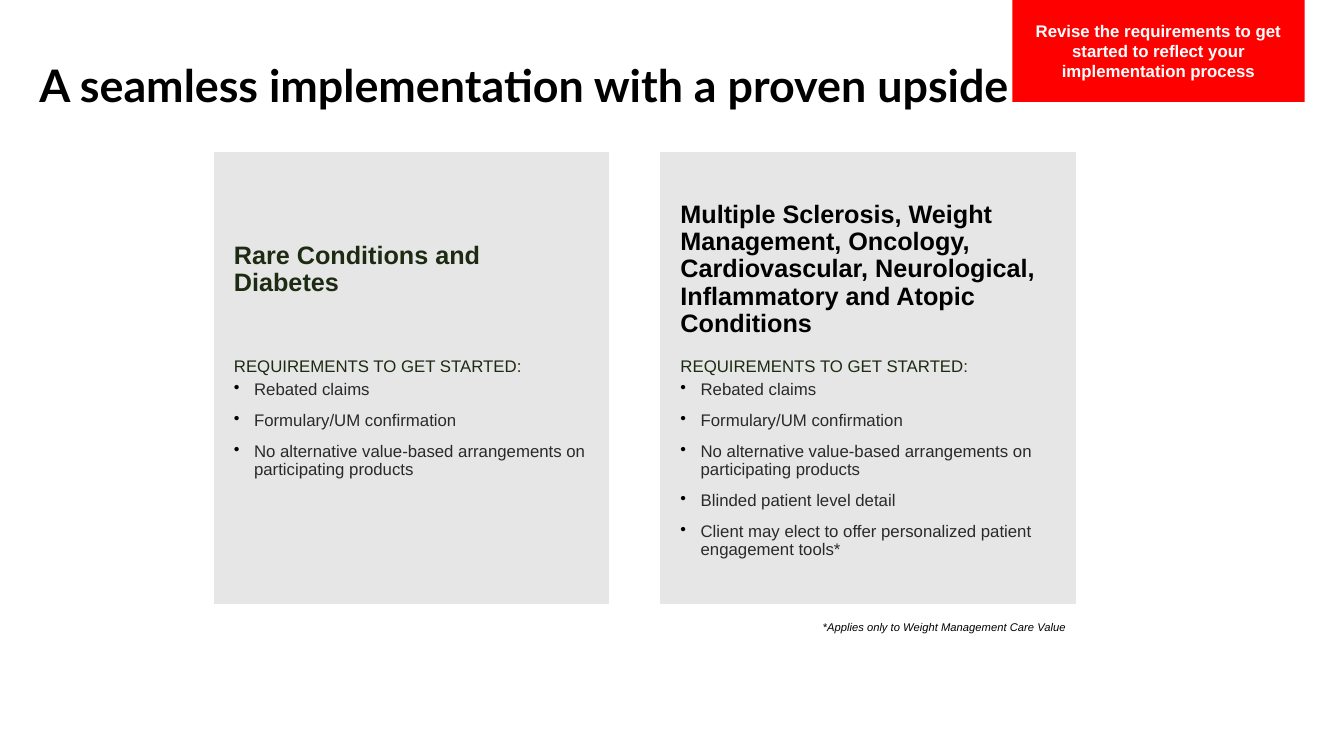
from lxml.etree import SubElement
from pptx import Presentation
from pptx.dml.color import RGBColor
from pptx.enum.shapes import MSO_SHAPE
from pptx.enum.text import MSO_ANCHOR as Anchor, PP_ALIGN as Align
from pptx.oxml.ns import qn
from pptx.util import Pt

PX = 9144  # 100 px to the inch
BLACK = RGBColor(0, 0, 0)
WHITE = RGBColor(255, 255, 255)
RED = RGBColor(255, 0, 0)
GREY = RGBColor(0xE7, 0xE6, 0xE6)
GREEN = RGBColor(0x1C, 0x2B, 0x12)
INK = RGBColor(0x2A, 0x2A, 0x2A)

PLAIN = "{2D5ABB26-0587-4C30-8999-92F81FD0307C}"  # no style, no grid
COLS = [392, 26, 21, 4, 412]
ROWS = [198, 24, 226]
NEEDS = [
    "Rebated claims",
    "Formulary/UM confirmation",
    "No alternative value-based arrangements on participating products",
]
MORE = [
    "Blinded patient level detail",
    "Client may elect to offer personalized patient engagement tools*",
]


def px(*nums):
    return [n * PX for n in nums]


def inset(box, left=0, top=0, right=0, bottom=0):
    """Set the inner margins of a text frame or a table cell."""
    (box.margin_left, box.margin_top,
     box.margin_right, box.margin_bottom) = px(left, top, right, bottom)


def bullet(para):
    props = para._p.get_or_add_pPr()
    props.set("marL", str(20 * PX))
    props.set("indent", str(-20 * PX))
    tint = SubElement(props, qn("a:buClr"))
    SubElement(tint, qn("a:srgbClr")).set("val", str(BLACK))
    SubElement(props, qn("a:buChar")).set("char", "•")


def write(frame, *lines, size=12, color=BLACK, face="Arial", bold=False,
          italic=False, align=Align.LEFT, dots=False, lead=None):
    """Put each line in its own paragraph, all in one format."""
    for i, line in enumerate(lines):
        para = frame.add_paragraph() if i else frame.paragraphs[0]
        if dots:
            bullet(para)
            para.space_after = Pt(6)
            para.space_before = Pt(3 if i else 0)
        para.alignment = align
        para.line_spacing = lead
        run = para.add_run()
        run.text = line
        font = run.font
        font.name, font.size = face, Pt(size)
        font.bold, font.italic = bold, italic
        font.color.rgb = color


def add_title(slide, text):
    title = slide.shapes.title
    title.left, title.top, title.width, title.height = px(39, 57, 1071, 110)
    frame = title.text_frame
    frame.vertical_anchor = Anchor.TOP
    inset(frame)
    write(frame, text, size=32, face="Lato", bold=True)


def add_grid(slide):
    """Add the borderless table with its unfilled spacer cells."""
    shape = slide.shapes.add_table(len(ROWS), len(COLS),
                                   *px(212, 151, sum(COLS), sum(ROWS)))
    grid = shape.table
    grid.first_row = grid.horz_banding = False
    next(shape._element.iter(qn("a:tableStyleId"))).text = PLAIN
    for col, width in zip(grid.columns, COLS):
        col.width = width * PX
    for row, height in zip(grid.rows, ROWS):
        row.height = height * PX
    for cell in grid.iter_cells():
        inset(cell)
        cell.fill.background()
    for row in grid.rows:
        for gap in list(row.cells)[1:-1]:
            para = gap.text_frame.paragraphs[0]._p
            SubElement(para, qn("a:endParaRPr")).set("sz", "800")
    return grid


def fill_card(grid, col, name, color, needs):
    head, label, body = [grid.cell(row, col) for row in range(len(ROWS))]
    for cell in (head, label, body):
        cell.fill.solid()
        cell.fill.fore_color.rgb = GREY
    inset(head, 20, 40, 20, 5)
    inset(label, 20, 0, 20, 0)
    inset(body, 20, 5, 20, 10)
    head.vertical_anchor = Anchor.MIDDLE
    label.vertical_anchor = Anchor.BOTTOM
    body.vertical_anchor = Anchor.TOP
    write(head.text_frame, name, size=18, color=color, bold=True, lead=0.97)
    write(label.text_frame, "REQUIREMENTS TO GET STARTED:", color=GREEN)
    write(body.text_frame, *needs, color=INK, dots=True, lead=0.97)


def add_flag(slide, text):
    flag = slide.shapes.add_shape(MSO_SHAPE.RECTANGLE, *px(1004, 0, 290, 101))
    flag.shadow.inherit = False
    flag.fill.solid()
    flag.fill.fore_color.rgb = RED
    flag.line.fill.background()
    frame = flag.text_frame
    frame.word_wrap = True
    frame.vertical_anchor = Anchor.MIDDLE
    inset(frame, 8, 4, 8, 4)
    write(frame, text, color=WHITE, bold=True, align=Align.CENTER)


def add_note(slide, text):
    frame = slide.shapes.add_textbox(*px(816, 609, 411, 20)).text_frame
    frame.word_wrap = True
    frame.vertical_anchor = Anchor.BOTTOM
    inset(frame)
    write(frame, text, size=8, italic=True)
    frame.paragraphs[0].space_after = Pt(6)


def main():
    deck = Presentation()
    deck.slide_width, deck.slide_height = px(1333, 750)
    slide = deck.slides.add_slide(deck.slide_layouts[5])
    add_title(slide, "A seamless implementation with a proven upside")
    grid = add_grid(slide)
    fill_card(grid, 0, "Rare Conditions and Diabetes", GREEN, NEEDS)
    fill_card(grid, 4, "Multiple Sclerosis, Weight Management, Oncology, "
              "Cardiovascular, Neurological, Inflammatory and Atopic "
              "Conditions", BLACK, NEEDS + MORE)
    add_flag(slide, "Revise the requirements to get started to reflect "
             "your implementation process")
    add_note(slide, "*Applies only to Weight Management Care Value")
    deck.save("out.pptx")


if __name__ == "__main__":
    main()
